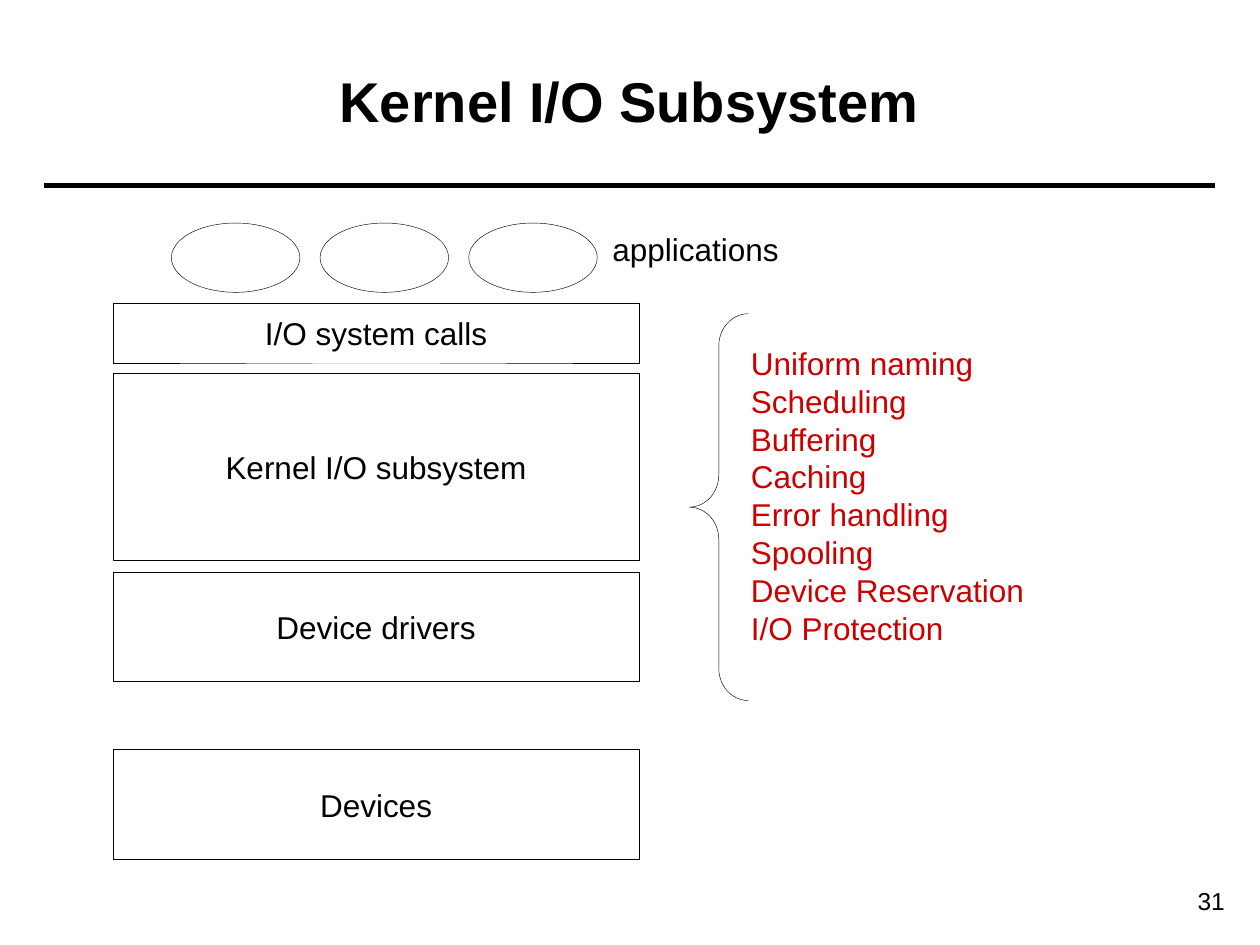
from pptx import Presentation
from pptx.dml.color import RGBColor
from pptx.enum.shapes import MSO_CONNECTOR as Connector, MSO_SHAPE as Shape
from pptx.enum.text import MSO_ANCHOR as Anchor, MSO_AUTO_SIZE as AutoSize, PP_ALIGN as Align
from pptx.oxml.ns import qn
from pptx.util import Inches, Pt

FONT = "Arial"
BLACK, RED = "000000", "CC0000"
SERVICES = ["Uniform naming", "Scheduling", "Buffering", "Caching",
            "Error handling", "Spooling", "Device Reservation", "I/O Protection"]
# Label, top and height of each layer, in inches
LAYERS = [("I/O system calls", 2.41, 0.47), ("Kernel I/O subsystem", 2.96, 1.49),
          ("Device drivers", 4.54, 0.87), ("Devices", 5.95, 0.87)]


def color(hex_value):
    return RGBColor.from_string(hex_value)


def place(part, left, top, width, height):
    part.left, part.top = Inches(left), Inches(top)
    part.width, part.height = Inches(width), Inches(height)


def write(frame, lines, size=18, hex_value=BLACK, bold=False, align=Align.CENTER,
          anchor=Anchor.TOP, wrap=True):
    frame.word_wrap = wrap
    frame.auto_size = AutoSize.NONE
    frame.vertical_anchor = anchor
    for index, line in enumerate(lines):
        paragraph = frame.add_paragraph() if index else frame.paragraphs[0]
        paragraph.alignment = align
        paragraph.space_before = Pt(0)
        run = paragraph.add_run()
        run.text = line
        run.font.name, run.font.size, run.font.bold = FONT, Pt(size), bold
        run.font.color.rgb = color(hex_value)


def add_outline(slide, kind, left, top, width, height):
    outline = slide.shapes.add_shape(
        kind, Inches(left), Inches(top), Inches(width), Inches(height))
    outline.shadow.inherit = False
    outline.fill.background()
    outline.line.color.rgb = color(BLACK)
    outline.line.width = Pt(0.25)
    return outline


def add_label(slide, text, left, top, width, height, **style):
    label = slide.shapes.add_textbox(
        Inches(left), Inches(top), Inches(width), Inches(height))
    write(label.text_frame, [text], **style)


def add_header(slide, left, top, width, height):
    title = slide.shapes.title
    place(title, left, top, width, height)
    write(title.text_frame, ["Kernel I/O Subsystem"], size=32, bold=True, anchor=Anchor.MIDDLE)
    # Rule under the title
    rule_y = Inches(top + height + 0.05)
    rule = slide.shapes.add_connector(
        Connector.STRAIGHT, Inches(left), rule_y, Inches(left + width), rule_y)
    rule.line.color.rgb = color(BLACK)
    rule.line.width = Pt(3)
    properties = rule._element.spPr
    properties.append(properties.makeelement(qn("a:effectLst"), {}))


def add_applications(slide, left, top, width, height, count=3, pitch=1.18):
    for index in range(count):
        add_outline(slide, Shape.OVAL, left + index * pitch, top, width, height)
    label_left = left + (count - 1) * pitch + width + 0.02
    add_label(slide, "applications", label_left, top + 0.01, 1.52, 0.4, wrap=False)


def add_layers(slide, left, width):
    for name, top, height in LAYERS:
        layer = add_outline(slide, Shape.RECTANGLE, left, top, width, height)
        write(layer.text_frame, [name], anchor=Anchor.MIDDLE, wrap=False)


def add_services(slide, left, top, width, height):
    services = slide.placeholders[1]
    place(services, left, top, width, height)
    write(services.text_frame, SERVICES, hex_value=RED, align=Align.LEFT, wrap=False)
    # Plain lines without bullets
    for paragraph in services.text_frame.paragraphs:
        properties = paragraph._p.get_or_add_pPr()
        properties.set("marL", "0")
        properties.set("indent", "0")
        properties.append(properties.makeelement(qn("a:buNone"), {}))
    # Brace that ties the services to the layers
    brace = add_outline(slide, Shape.LEFT_BRACE, left - 0.39, top - 0.19, 0.47, 3.07)
    brace.adjustments[0] = 0.542
    brace.adjustments[1] = 0.5


def main():
    deck = Presentation()
    deck.slide_width, deck.slide_height = Inches(10), Inches(7.5)
    slide = deck.slides.add_slide(deck.slide_layouts[1])
    add_header(slide, 0.35, 0.17, 9.29, 1.25)
    add_applications(slide, 1.36, 1.77, 1.02, 0.55)
    add_layers(slide, 0.9, 4.17)
    add_services(slide, 5.86, 2.68, 2.37, 2.8)
    # Page number
    add_label(slide, "31", 8.78, 6.98, 1.04, 0.34, size=14, align=Align.RIGHT)
    deck.save("out.pptx")


if __name__ == "__main__":
    main()
